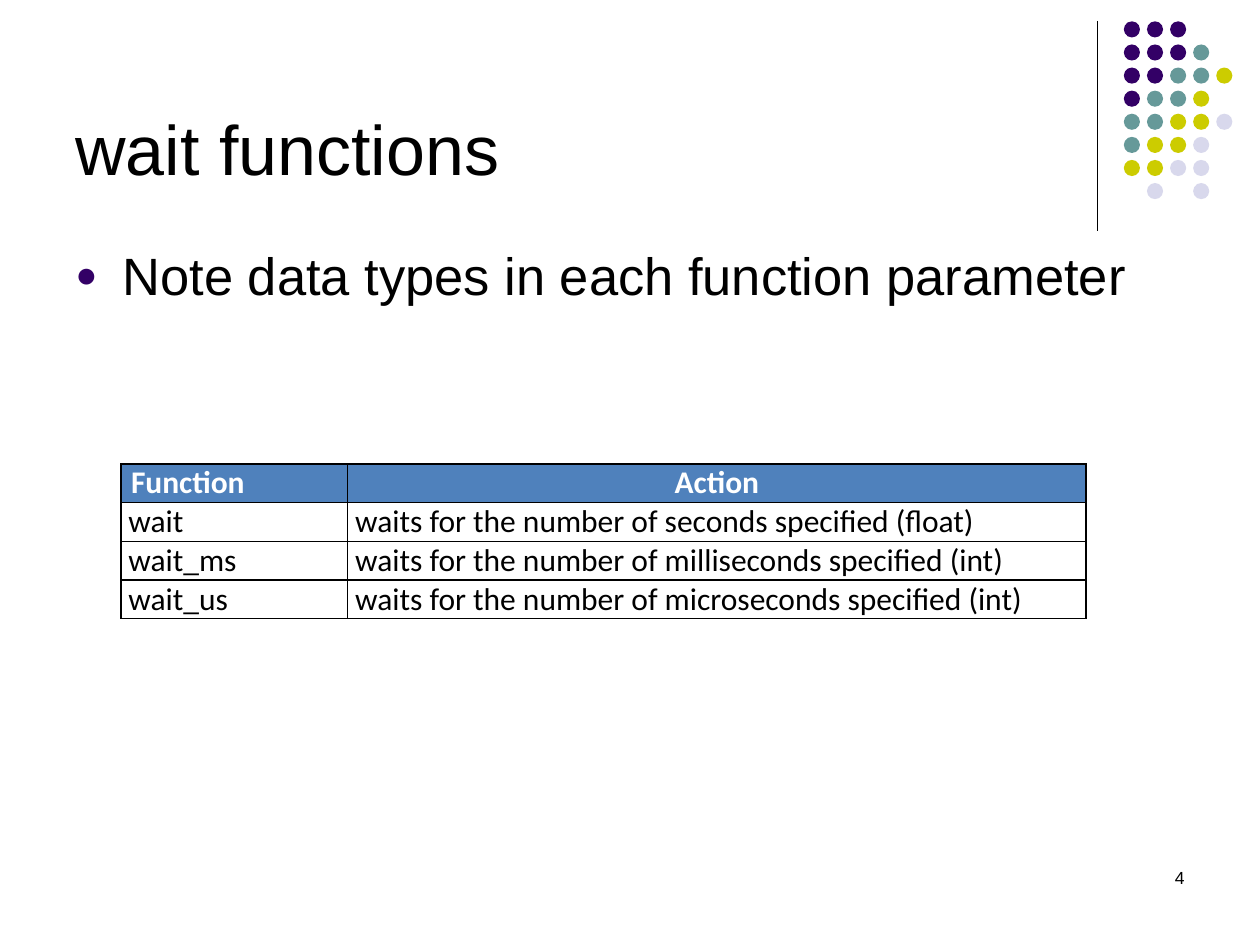
from dataclasses import dataclass

from lxml.etree import SubElement
from pptx import Presentation
from pptx.dml.color import RGBColor
from pptx.enum.shapes import MSO_CONNECTOR as Connector, MSO_SHAPE as Preset
from pptx.enum.text import MSO_ANCHOR as Anchor, PP_ALIGN as Align
from pptx.oxml.ns import qn
from pptx.util import Pt

BLACK = RGBColor(0x00, 0x00, 0x00)
WHITE = RGBColor(0xFF, 0xFF, 0xFF)
PURPLE = RGBColor(0x33, 0x00, 0x66)
TEAL = RGBColor(0x66, 0x99, 0x99)
OLIVE = RGBColor(0xCC, 0xCC, 0x00)
LILAC = RGBColor(0xD8, 0xD8, 0xEC)
BLUE = RGBColor(0x4F, 0x81, 0xBC)

DOT_COLORS = {"P": PURPLE, "T": TEAL, "O": OLIVE, "L": LILAC}
DOT_ROWS = ["PPP", "PPPT", "PPTTO", "PTTO", "TTOOL", "TOOL", "OOLL", " L L"]
DOT_LEFT, DOT_TOP, DOT_PITCH, DOT_SIZE = 642.2, 12.2, 13.2, 9.2

TABLE_LEFT, TABLE_TOP, ROW_HEIGHT = 69.1, 265, 22.15
COLUMN_WIDTHS = (129.6, 421.9)
TABLE_ROWS = [
    ("Function", "Action"),
    ("wait", "waits for the number of seconds specified (float)"),
    ("wait_ms", "waits for the number of milliseconds specified (int)"),
    ("wait_us", "waits for the number of microseconds specified (int)"),
]


@dataclass
class TextStyle:
    size: float
    font: str = "Arial"
    color: RGBColor = BLACK
    bold: bool = False
    align: Align = Align.LEFT


@dataclass
class TextBlock:
    text: str
    left: float
    top: float
    width: float
    height: float
    style: TextStyle
    anchor: Anchor = Anchor.TOP


TITLE = TextBlock("wait functions", 36, 9.4, 594, 102.2, TextStyle(40), Anchor.BOTTOM)
BODY = TextBlock("Note data types in each function parameter",
                 36, 135.4, 648, 347, TextStyle(30))
NUMBER = TextBlock("4", 516.2, 491.8, 167.8, 36, TextStyle(10, align=Align.RIGHT))
HEADER_STYLE = TextStyle(18, "Calibri", WHITE, bold=True)
CENTERED_HEADER_STYLE = TextStyle(18, "Calibri", WHITE, True, Align.CENTER)
CELL_STYLE = TextStyle(18, "Calibri")


def write_text(para, text: str, style: TextStyle) -> None:
    para.alignment = style.align
    span = para.add_run()
    span.text = text
    span.font.size = Pt(style.size)
    span.font.name = style.font
    span.font.bold = style.bold
    span.font.color.rgb = style.color


def set_indent(para, margin: float, first_line: float) -> None:
    properties = para._p.get_or_add_pPr()
    properties.set("marL", str(Pt(margin)))
    properties.set("indent", str(Pt(first_line)))


def add_bullet(para, char: str, color: RGBColor, percent: int) -> None:
    properties = para._p.get_or_add_pPr()
    bullet_color = SubElement(properties, qn("a:buClr"))
    SubElement(bullet_color, qn("a:srgbClr"), val=str(color))
    SubElement(properties, qn("a:buSzPct"), val=str(percent * 1000))
    SubElement(properties, qn("a:buFont"), typeface="Arial")
    SubElement(properties, qn("a:buChar"), char=char)


def add_text(page, block: TextBlock):
    """Add a text box and return its paragraph."""
    box = page.shapes.add_textbox(Pt(block.left), Pt(block.top),
                                  Pt(block.width), Pt(block.height))
    frame = box.text_frame
    frame.word_wrap = True
    frame.vertical_anchor = block.anchor
    para = frame.paragraphs[0]
    write_text(para, block.text, block.style)
    return para


def add_rule(page) -> None:
    """Draw the vertical line left of the dots."""
    rule = page.shapes.add_connector(Connector.STRAIGHT, Pt(627), Pt(12), Pt(627), Pt(132))
    rule.line.color.rgb = BLACK
    rule.line.width = Pt(0.75)
    SubElement(rule._element.spPr, qn("a:effectLst"))


def add_dots(page) -> None:
    group = page.shapes.add_group_shape()
    for row, codes in enumerate(DOT_ROWS):
        for column, code in enumerate(codes):
            if code not in DOT_COLORS:
                continue
            dot = group.shapes.add_shape(
                Preset.OVAL, Pt(DOT_LEFT + column * DOT_PITCH),
                Pt(DOT_TOP + row * DOT_PITCH), Pt(DOT_SIZE), Pt(DOT_SIZE))
            dot.shadow.inherit = False
            dot.fill.solid()
            dot.fill.fore_color.rgb = DOT_COLORS[code]
            dot.line.fill.background()


def add_borders(cell, color: RGBColor, width: float) -> None:
    properties = cell._tc.get_or_add_tcPr()
    for index, side in enumerate(("a:lnL", "a:lnR", "a:lnT", "a:lnB")):
        border = properties.makeelement(qn(side), {"w": str(Pt(width))})
        fill = SubElement(border, qn("a:solidFill"))
        SubElement(fill, qn("a:srgbClr"), val=str(color))
        properties.insert(index, border)


def fill_cell(cell, text: str, is_header: bool, is_first: bool) -> None:
    cell.margin_left = cell.margin_right = cell.margin_top = cell.margin_bottom = 0
    para = cell.text_frame.paragraphs[0]
    if is_header:
        cell.fill.solid()
        cell.fill.fore_color.rgb = BLUE
        write_text(para, text, HEADER_STYLE if is_first else CENTERED_HEADER_STYLE)
        if is_first:
            set_indent(para, 6.5, -0.7)
    else:
        cell.fill.background()
        write_text(para, text, CELL_STYLE)
        set_indent(para, 5, -0.7)
    add_borders(cell, BLACK, 1)


def add_function_table(page) -> None:
    table = page.shapes.add_table(
        len(TABLE_ROWS), len(COLUMN_WIDTHS), Pt(TABLE_LEFT), Pt(TABLE_TOP),
        Pt(sum(COLUMN_WIDTHS)), Pt(ROW_HEIGHT * len(TABLE_ROWS))).table
    table.horz_banding = False
    for column, width in zip(table.columns, COLUMN_WIDTHS):
        column.width = Pt(width)
    for row, texts in enumerate(TABLE_ROWS):
        table.rows[row].height = Pt(ROW_HEIGHT)
        for column, text in enumerate(texts):
            fill_cell(table.cell(row, column), text, row == 0, column == 0)


def main() -> None:
    deck = Presentation()
    deck.slide_width, deck.slide_height = Pt(720), Pt(540)
    page = deck.slides.add_slide(deck.slide_layouts[6])
    add_rule(page)
    add_dots(page)
    add_text(page, TITLE)
    note = add_text(page, BODY)
    note.space_before = Pt(3)
    set_indent(note, 27, -27)
    add_bullet(note, "●", PURPLE, 70)
    add_function_table(page)
    add_text(page, NUMBER)
    deck.save("out.pptx")


if __name__ == "__main__":
    main()
